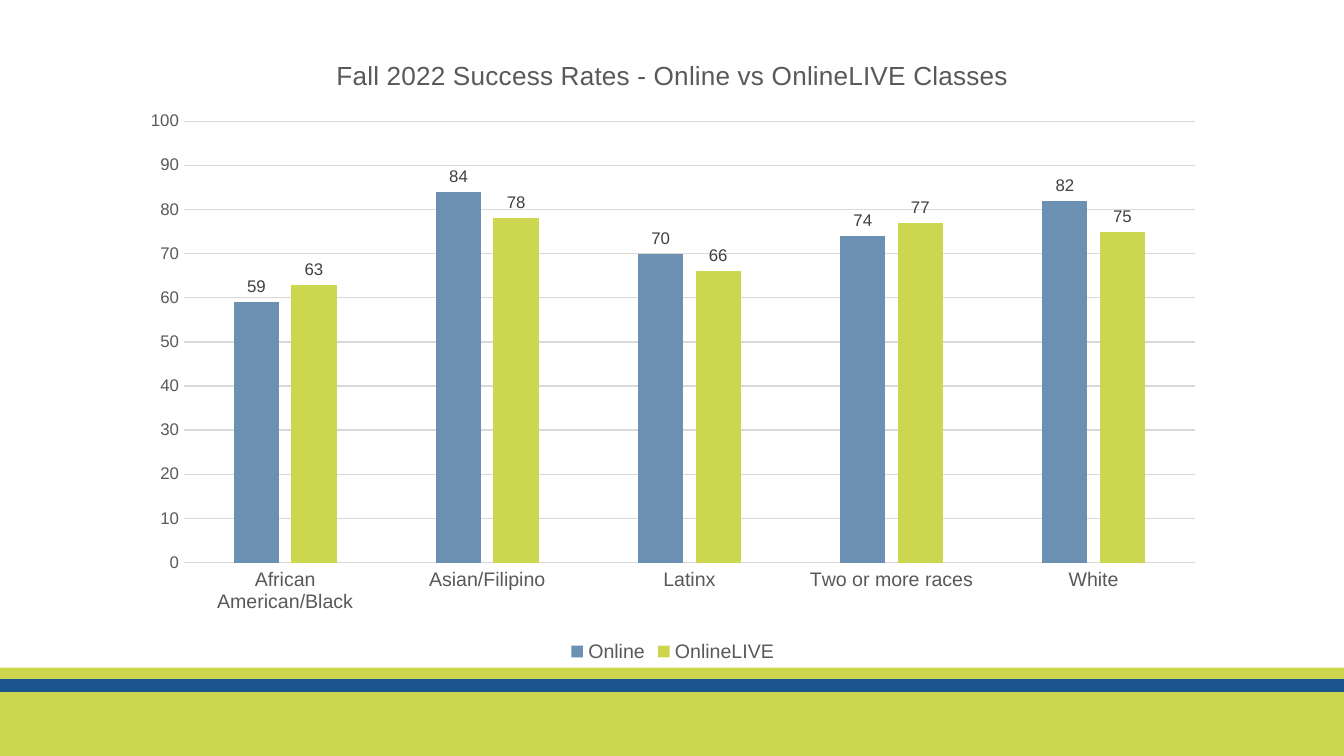
from pptx import Presentation
from pptx.chart.data import CategoryChartData
from pptx.dml.color import RGBColor
from pptx.enum.chart import XL_CHART_TYPE, XL_LABEL_POSITION, XL_LEGEND_POSITION, XL_TICK_MARK
from pptx.enum.shapes import MSO_SHAPE
from pptx.util import Cm, Pt

COLUMNS = XL_CHART_TYPE.COLUMN_CLUSTERED
OUTSIDE_END = XL_LABEL_POSITION.OUTSIDE_END
BOTTOM = XL_LEGEND_POSITION.BOTTOM
NO_TICK = XL_TICK_MARK.NONE
RECTANGLE = MSO_SHAPE.RECTANGLE
BLANK_LAYOUT = 6

GROUPS = ["African American/Black", "Asian/Filipino", "Latinx", "Two or more races", "White"]
SUCCESS_RATES = {
    "Online": [59, 84, 70, 74, 82],
    "OnlineLIVE": [63, 78, 66, 77, 75],
}


def rgb(value):
    return RGBColor.from_string(value)


def format_font(font, size, color, name="Arial"):
    font.name = name
    font.size = Pt(size)
    font.bold = False
    font.color.rgb = rgb(color)


def write_text(para, text, **style):
    span = para.add_run()
    span.text = text
    format_font(span.font, **style)


def format_line(line, color, width):
    line.color.rgb = rgb(color)
    line.width = Pt(width)


class SlideBuilder:
    """Holds the shared style and the slide being filled."""

    lime = "CCD64E"
    navy = "1B558E"
    series_colors = ("6B90B2", lime)
    text_color = "595959"
    label_color = "404040"
    grid_color = "D9D9D9"

    def __init__(self, slide):
        self.slide = slide

    def band(self, top, height, fill, line_width=0):
        """Draw a stripe across the whole slide."""
        box = self.slide.shapes.add_shape(RECTANGLE, 0, Cm(top), Cm(25.4), Cm(height))
        box.shadow.inherit = False
        box.fill.solid()
        box.fill.fore_color.rgb = rgb(fill)
        if line_width:
            format_line(box.line, fill, line_width)
        else:
            box.line.fill.background()

    def column_chart(self, title, categories, series, left, top, width, height):
        data = CategoryChartData()
        data.categories = categories
        for name, values in series.items():
            data.add_series(name, values)
        chart = self.slide.shapes.add_chart(
            COLUMNS, Cm(left), Cm(top), Cm(width), Cm(height), data).chart
        format_font(chart.font, 10, "000000")

        chart.has_title = True
        chart.chart_title.include_in_layout = False
        write_text(chart.chart_title.text_frame.paragraphs[0], title,
                   size=14, color=self.text_color)

        chart.has_legend = True
        chart.legend.position = BOTTOM
        chart.legend.include_in_layout = False
        format_font(chart.legend.font, 10.5, self.text_color)

        self.format_axes(chart)
        self.format_columns(chart.plots[0])

    def format_axes(self, chart):
        for axis, size in ((chart.category_axis, 10.5), (chart.value_axis, 9)):
            axis.major_tick_mark = axis.minor_tick_mark = NO_TICK
            format_font(axis.tick_labels.font, size, self.text_color)
        format_line(chart.category_axis.format.line, self.grid_color, 0.75)

        values = chart.value_axis
        values.minimum_scale, values.maximum_scale, values.major_unit = 0, 100, 10
        values.format.line.fill.background()
        values.has_major_gridlines = True
        format_line(values.major_gridlines.format.line, self.grid_color, 0.75)

    def format_columns(self, plot):
        plot.vary_by_categories = False
        plot.gap_width = 219
        plot.overlap = -27
        for series, color in zip(plot.series, self.series_colors):
            series.format.fill.solid()
            series.format.fill.fore_color.rgb = rgb(color)
            labels = series.data_labels
            labels.show_value = True
            labels.position = OUTSIDE_END
            format_font(labels.font, 9, self.label_color)


def main():
    deck = Presentation()
    deck.slide_width = Cm(25.4)
    deck.slide_height = Cm(14.29)
    builder = SlideBuilder(deck.slides.add_slide(deck.slide_layouts[BLANK_LAYOUT]))
    builder.band(12.62, 1.67, builder.lime)
    builder.band(12.88, 0.16, builder.navy, line_width=2)
    builder.column_chart("Fall 2022 Success Rates - Online vs OnlineLIVE Classes",
                         GROUPS, SUCCESS_RATES,
                         left=2.44, top=0.64, width=20.55, height=11.99)
    deck.save("out.pptx")


if __name__ == "__main__":
    main()
